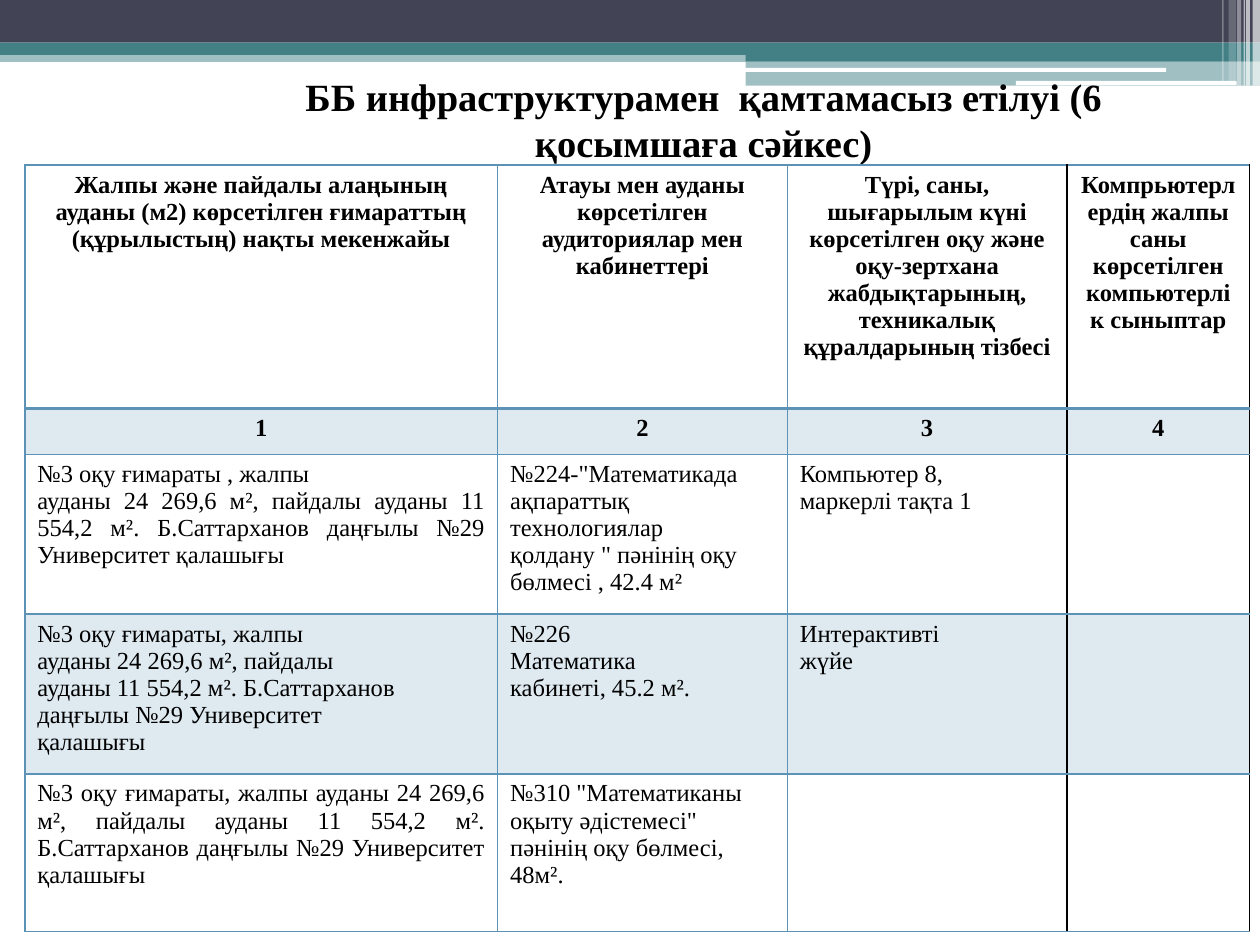
from dataclasses import dataclass

from lxml import etree
from pptx import Presentation
from pptx.dml.color import RGBColor
from pptx.enum.shapes import MSO_SHAPE
from pptx.enum.text import MSO_ANCHOR, PP_ALIGN
from pptx.oxml.ns import qn
from pptx.util import Cm, Pt

RECTANGLE, ROUNDED = MSO_SHAPE.RECTANGLE, MSO_SHAPE.ROUNDED_RECTANGLE
CENTER, JUSTIFY, LEFT = PP_ALIGN.CENTER, PP_ALIGN.JUSTIFY, PP_ALIGN.LEFT
BOTTOM = MSO_ANCHOR.BOTTOM


@dataclass(frozen=True)
class Theme:
    font: str = "Times New Roman"
    title_size: int = 22
    table_size: int = 14
    text: str = "000000"
    dark: str = "424456"
    teal: str = "438086"
    blue: str = "5C92B5"
    white: str = "FFFFFF"


THEME = Theme()

# Header bands: left, top, width, height (cm), colour, opacity in percent
BANDS = [
    (0, 1.02, 25.4, 0.23, THEME.teal, 50),
    (0, 0, 25.4, 0.86, THEME.dark, 100),
    (0, 0.86, 25.4, 0.25, THEME.teal, 100),
    (15.03, 0.98, 10.37, 0.25, THEME.teal, 100),
    (15.03, 1.23, 10.37, 0.5, THEME.teal, 50),
]
# White rules: left, top, width, height (cm)
RULES = [(15.01, 1.37, 8.5, 0.08), (20.48, 1.63, 4.45, 0.09)]
# White stripes at the right edge: left, width, height (cm), opacity
STRIPES = [
    (25.25, 0.15, 1.73, 65),
    (25.12, 0.08, 1.73, 65),
    (25.07, 0.03, 1.73, 60),
    (24.94, 0.08, 1.73, 40),
    (24.77, 0.15, 1.63, 20),
    (24.64, 0.03, 1.63, 30),
]

TITLE = "ББ инфраструктурамен  қамтамасыз етілуі (6 қосымшаға сәйкес)"
COLUMN_WIDTHS = [9.53, 5.84, 5.64, 3.68]
ROW_HEIGHTS = [4.91, 0.92, 3.18, 3.18, 3.18]
HEADER_ROWS = 2
SHADED_ROWS = (1, 3)
ROWS = [
    ["Жалпы және пайдалы алаңының ауданы (м2) көрсетілген ғимараттың (құрылыстың) нақты мекенжайы",
     "Атауы мен ауданы көрсетілген аудиториялар мен кабинеттері",
     "Түрі, саны, шығарылым күні көрсетілген оқу және оқу-зертхана жабдықтарының, "
     "техникалық құралдарының тізбесі",
     "Компрьютерлердің жалпы саны көрсетілген компьютерлік сыныптар"],
    ["1", "2", "3", "4"],
    ["№3 оқу ғимараты , жалпы\nауданы 24 269,6 м², пайдалы ауданы 11 554,2 м². "
     "Б.Саттарханов даңғылы №29 Университет қалашығы",
     "№224-\"Математикада\nақпараттық технологиялар\nқолдану \" пәнінің оқу\nбөлмесі , 42.4 м²",
     "Компьютер 8,\nмаркерлі тақта 1",
     ""],
    ["№3 оқу ғимараты, жалпы\nауданы 24 269,6 м², пайдалы\nауданы 11 554,2 м². Б.Саттарханов\n"
     "даңғылы №29 Университет\nқалашығы",
     "№226\nМатематика\nкабинеті, 45.2 м².",
     "Интерактивті\nжүйе",
     ""],
    ["№3 оқу ғимараты, жалпы ауданы 24 269,6 м², пайдалы ауданы 11 554,2 м². "
     "Б.Саттарханов даңғылы №29 Университет қалашығы",
     "№310 \"Математиканы оқыту әдістемесі\" пәнінің оқу бөлмесі, 48м².",
     "",
     ""],
]


def set_fill(fill, color, opacity=100):
    fill.solid()
    fill.fore_color.rgb = RGBColor.from_string(color)
    if opacity < 100:
        # fore_color has no opacity setting, so it goes in as XML
        for part in (fill, ):
            color_element = part._xPr.find(f"{qn('a:solidFill')}/{qn('a:srgbClr')}")
            etree.SubElement(color_element, qn("a:alpha"), val=str(opacity * 1000))


def format_text(text_frame, size, bold, alignment):
    for paragraph in text_frame.paragraphs:
        paragraph.alignment = alignment
        for run in paragraph.runs:
            run.font.name = THEME.font
            run.font.size = Pt(size)
            run.font.bold = bold
            run.font.color.rgb = RGBColor.from_string(THEME.text)


def set_borders(cell, borders):
    """Borders are (tag, colour, points) in the order L, R, T, B."""
    properties = cell._tc.get_or_add_tcPr()
    for position, (tag, color, points) in enumerate(borders):
        line = etree.Element(qn(tag), w=str(Pt(points)))
        solid = etree.SubElement(line, qn("a:solidFill"))
        etree.SubElement(solid, qn("a:srgbClr"), val=color)
        properties.insert(position, line)


def add_block(slide, kind, left, top, width, height, color, opacity=100):
    shape = slide.shapes.add_shape(kind, Cm(left), Cm(top), Cm(width), Cm(height))
    shape.shadow.inherit = False
    shape.line.fill.background()
    set_fill(shape.fill, color, opacity)


def add_header(slide, left, top):
    for x, y, width, height, color, opacity in BANDS:
        add_block(slide, RECTANGLE, left + x, top + y, width, height, color, opacity)
    for x, y, width, height in RULES:
        add_block(slide, ROUNDED, left + x, top + y, width, height, THEME.white)
    for x, width, height, opacity in STRIPES:
        add_block(slide, RECTANGLE, left + x, top, width, height, THEME.white, opacity)


def add_title(slide, left, top, width, height):
    box = slide.shapes.add_textbox(Cm(left), Cm(top), Cm(width), Cm(height))
    text_frame = box.text_frame
    text_frame.word_wrap = True
    text_frame.vertical_anchor = BOTTOM
    text_frame.text = TITLE
    format_text(text_frame, THEME.title_size, True, CENTER)


def add_rooms_table(slide, left, top):
    frame = slide.shapes.add_table(len(ROWS), len(COLUMN_WIDTHS), Cm(left), Cm(top),
                                   Cm(sum(COLUMN_WIDTHS)), Cm(sum(ROW_HEIGHTS)))
    table = frame.table
    table.first_row = table.horz_banding = False
    for column, width in zip(table.columns, COLUMN_WIDTHS):
        column.width = Cm(width)
    for row, height in zip(table.rows, ROW_HEIGHTS):
        row.height = Cm(height)

    for r, texts in enumerate(ROWS):
        is_header = r < HEADER_ROWS
        for c, text in enumerate(texts):
            cell = table.cell(r, c)
            cell.text_frame.text = text
            alignment = CENTER if is_header else JUSTIFY if c == 0 else LEFT
            format_text(cell.text_frame, THEME.table_size, is_header, alignment)
            if r in SHADED_ROWS:
                set_fill(cell.fill, THEME.blue, 20)
            else:
                cell.fill.background()
            # The last column is framed in black, the heading has a heavier rule
            set_borders(cell, [
                ("a:lnL", THEME.text if c == 3 else THEME.blue, 1),
                ("a:lnR", THEME.text if c >= 2 else THEME.blue, 1),
                ("a:lnT", THEME.blue, 2 if r == 1 else 1),
                ("a:lnB", THEME.blue, 2 if r == 0 else 1),
            ])


def main():
    presentation = Presentation()
    presentation.slide_width, presentation.slide_height = Cm(25.4), Cm(19.05)
    slide = presentation.slides.add_slide(presentation.slide_layouts[6])
    add_header(slide, 0, 0)
    add_title(slide, 5.28, 1.32, 17.81, 2.13)
    add_rooms_table(slide, 0.5, 3.33)
    presentation.save("out.pptx")


if __name__ == "__main__":
    main()
